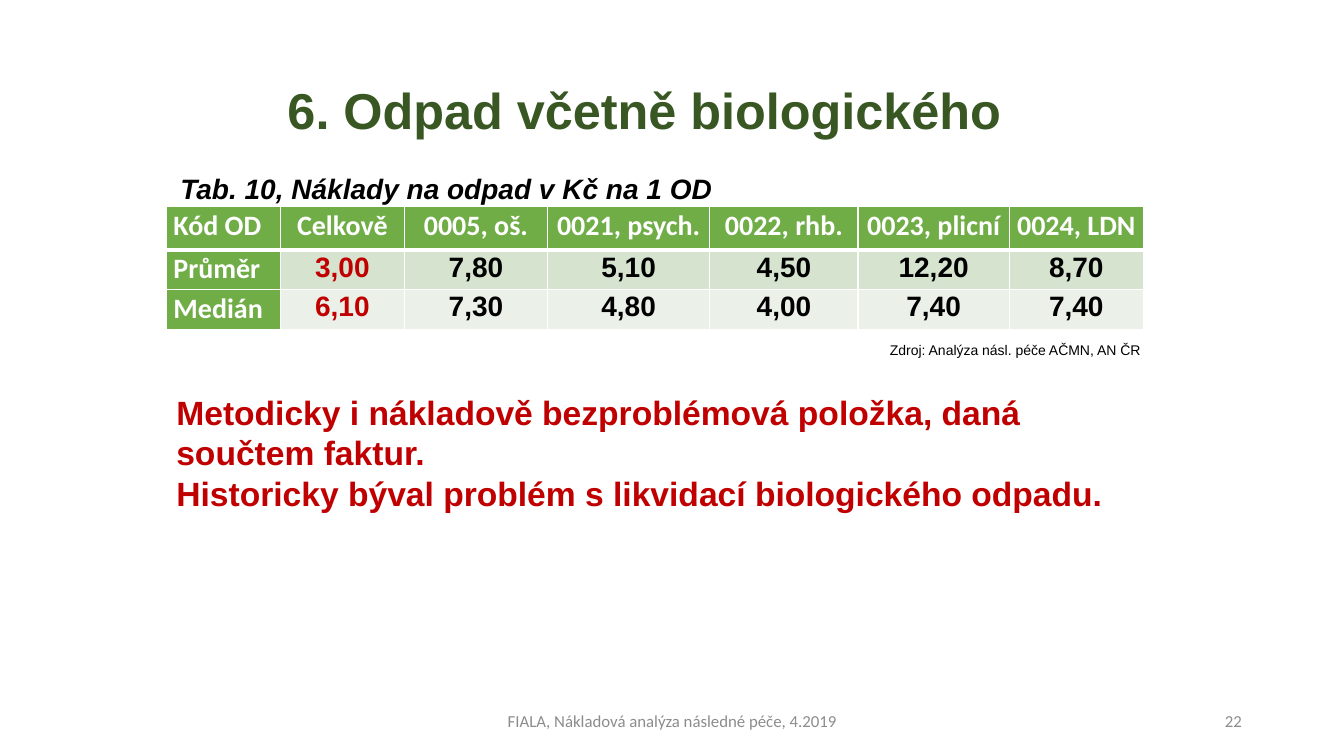
from dataclasses import dataclass

from lxml.etree import SubElement
from pptx import Presentation
from pptx.dml.color import RGBColor
from pptx.enum.text import MSO_ANCHOR, PP_ALIGN
from pptx.oxml.ns import qn
from pptx.util import Inches, Pt

WHITE = RGBColor(0xFF, 0xFF, 0xFF)
BLACK = RGBColor(0x00, 0x00, 0x00)
RED = RGBColor(0xC0, 0x00, 0x00)
GRAY = RGBColor(0x8C, 0x8C, 0x8C)
DARK_GREEN = RGBColor(0x38, 0x57, 0x23)
GREEN = RGBColor(0x70, 0xAD, 0x47)
BANDS = [RGBColor(0xD5, 0xE3, 0xCF), RGBColor(0xEB, 0xF1, 0xE9)]

SLIDE_WIDTH, SLIDE_HEIGHT = Inches(13.33), Inches(7.5)


def across(percent: float) -> int:
    return round(SLIDE_WIDTH * percent / 100)


def down(percent: float) -> int:
    return round(SLIDE_HEIGHT * percent / 100)


@dataclass(frozen=True)
class Box:
    """Position and size in percent of the slide."""
    left: float
    top: float
    width: float
    height: float

    def emu(self) -> tuple[int, int, int, int]:
        return across(self.left), down(self.top), across(self.width), down(self.height)


@dataclass(frozen=True)
class Style:
    size: int
    color: RGBColor
    name: str = "Arial"
    bold: bool = False
    italic: bool = False
    align: PP_ALIGN = PP_ALIGN.LEFT
    spacing: float = 1.0


@dataclass(frozen=True)
class Label:
    box: Box
    lines: list[str]
    style: Style
    anchor: MSO_ANCHOR = MSO_ANCHOR.TOP


TITLE = Label(Box(6.9, 5.33, 82.13, 19.33), ["6. Odpad včetně biologického"],
              Style(36, DARK_GREEN, bold=True, align=PP_ALIGN.CENTER, spacing=0.9),
              MSO_ANCHOR.MIDDLE)
LABELS = [
    # Table caption
    Label(Box(12.68, 22.53, 45, 5.33), ["Tab. 10, Náklady na odpad v\u00a0Kč na 1 OD"],
          Style(20, BLACK, bold=True, italic=True, spacing=0.9)),
    # Source of the data
    Label(Box(65.48, 44.53, 20.48, 3.6), ["Zdroj: Analýza násl. péče AČMN, AN ČR"],
          Style(10, BLACK)),
    # Conclusion
    Label(Box(12.38, 51.2, 71.03, 17.47),
          ["Metodicky i nákladově bezproblémová položka, daná",
           "součtem faktur.",
           "Historicky býval problém s likvidací biologického odpadu."],
          Style(24, RED, bold=True)),
    # Footer and slide number
    Label(Box(33.15, 92.67, 33.75, 5.33), ["FIALA, Nákladová analýza následné péče, 4.2019"],
          Style(12, GRAY, "Calibri", align=PP_ALIGN.CENTER), MSO_ANCHOR.MIDDLE),
    Label(Box(70.65, 92.67, 22.5, 5.33), ["22"],
          Style(12, GRAY, "Calibri", align=PP_ALIGN.RIGHT), MSO_ANCHOR.MIDDLE),
]

TABLE_BOX = Box(12.38, 27.33, 72.75, 16.27)
COLUMN_WIDTHS = [8.48, 9.23, 10.65, 12.08, 11.03, 11.25, 9.98]
ROW_HEIGHTS = [5.73, 5.2, 5.33]
COSTS = [
    ["Kód OD", "Celkově", "0005, oš.", "0021, psych.", "0022, rhb.", "0023, plicní", "0024, LDN"],
    ["Průměr", "3,00", "7,80", "5,10", "4,50", "12,20", "8,70"],
    ["Medián", "6,10", "7,30", "4,80", "4,00", "7,40", "7,40"],
]


def write(text_frame, lines: list[str], style: Style) -> None:
    text_frame.text = "\n".join(lines)
    for paragraph in text_frame.paragraphs:
        paragraph.alignment = style.align
        paragraph.line_spacing = style.spacing
        font = paragraph.font
        font.name, font.size = style.name, Pt(style.size)
        font.bold, font.italic = style.bold, style.italic
        font.color.rgb = style.color


def fill_label(shape, label: Label) -> None:
    shape.left, shape.top, shape.width, shape.height = label.box.emu()
    shape.text_frame.word_wrap = True
    shape.text_frame.vertical_anchor = label.anchor
    write(shape.text_frame, label.lines, label.style)


def add_borders(cell, bottom: int) -> None:
    properties = cell._tc.get_or_add_tcPr()
    for side, points in {"lnL": 1, "lnR": 1, "lnT": 1, "lnB": bottom}.items():
        line = SubElement(properties, qn(f"a:{side}"), w=str(Pt(points)))
        fill = SubElement(line, qn("a:solidFill"))
        SubElement(fill, qn("a:srgbClr"), val=str(WHITE))


def cell_style(row: int, column: int) -> Style:
    align = PP_ALIGN.CENTER if column else PP_ALIGN.LEFT
    if row == 0 or column == 0:
        return Style(20, WHITE, "Calibri", bold=True, align=align, spacing=1.07)
    color = RED if column == 1 else BLACK
    return Style(20, color, bold=True, align=align, spacing=1.07)


def add_cost_table(slide) -> None:
    table = slide.shapes.add_table(len(COSTS), len(COSTS[0]), *TABLE_BOX.emu()).table
    for column, width in zip(table.columns, COLUMN_WIDTHS):
        column.width = across(width)
    for row, height in zip(table.rows, ROW_HEIGHTS):
        row.height = down(height)
    for row, values in enumerate(COSTS):
        for column, value in enumerate(values):
            cell = table.cell(row, column)
            cell.margin_left = cell.margin_right = Inches(0.07)
            cell.margin_top = cell.margin_bottom = 0
            add_borders(cell, bottom=1 if row else 3)
            cell.fill.solid()
            cell.fill.fore_color.rgb = BANDS[row - 1] if row and column else GREEN
            write(cell.text_frame, [value], cell_style(row, column))


def main() -> None:
    presentation = Presentation()
    presentation.slide_width, presentation.slide_height = SLIDE_WIDTH, SLIDE_HEIGHT
    slide = presentation.slides.add_slide(presentation.slide_layouts[5])
    fill_label(slide.shapes.title, TITLE)
    add_cost_table(slide)
    for label in LABELS:
        fill_label(slide.shapes.add_textbox(*label.box.emu()), label)
    presentation.save("out.pptx")


if __name__ == "__main__":
    main()
